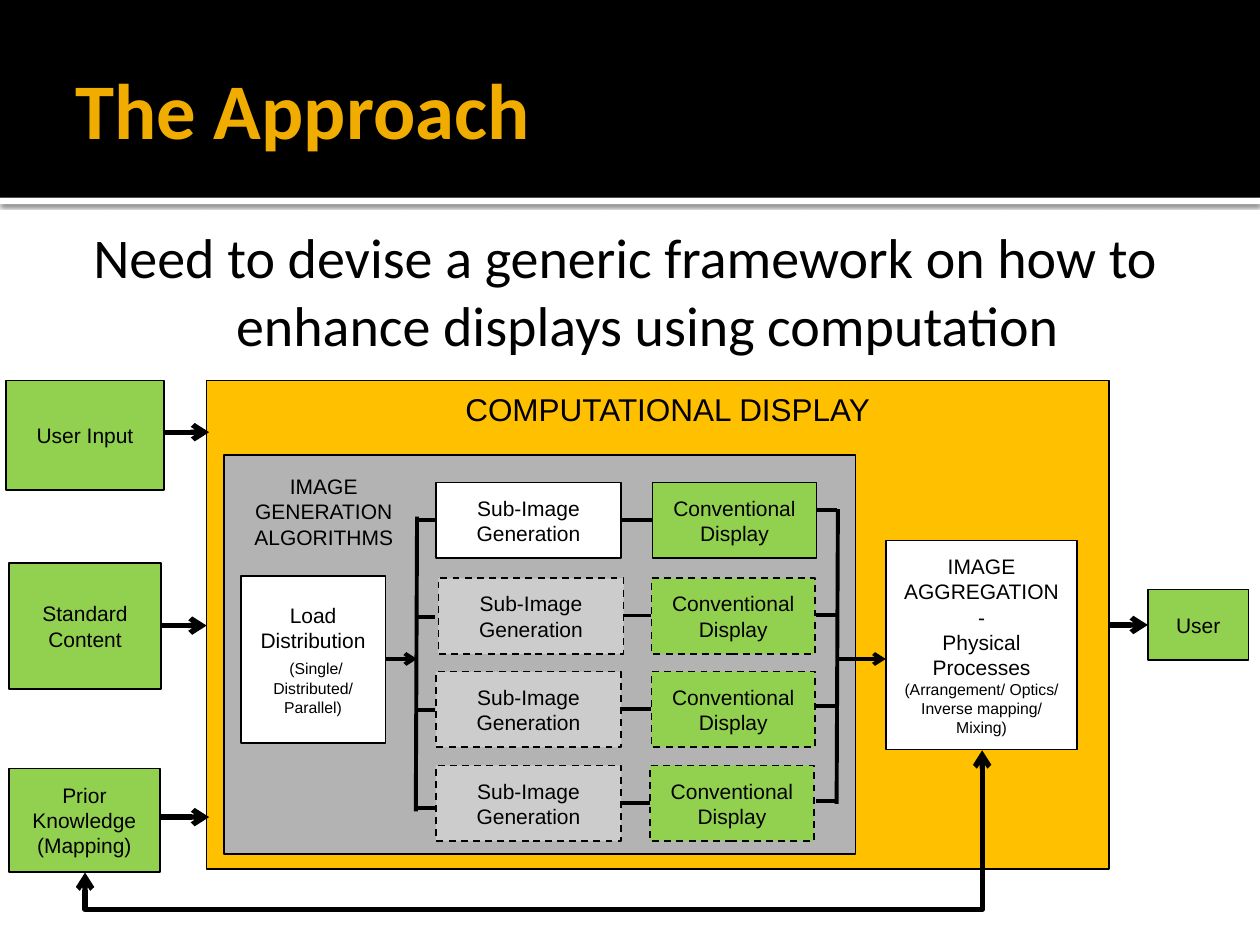
import pptx
import pptx.dml.color
import pptx.enum.dml
import pptx.enum.shapes
import pptx.enum.text
import pptx.oxml
import pptx.oxml.ns
import pptx.util

ANCHOR = pptx.enum.text.MSO_ANCHOR
ALIGN = pptx.enum.text.PP_ALIGN
DASH = pptx.enum.dml.MSO_LINE.DASH
CONNECTOR = pptx.enum.shapes.MSO_CONNECTOR
INCH = pptx.util.Inches(1)

# The slide is a grid of 100 columns by 75 rows
WIDTH, HEIGHT = 10 * INCH, int(7.5 * INCH)
COLUMN, ROW = WIDTH / 100, HEIGHT / 75

BLACK, WHITE, GREEN = "000000", "FFFFFF", "92D050"
GOLD, AMBER, GREY, PALE = "F0AD00", "FFC000", "B3B3B3", "CCCCCC"
LABEL = {"size": 12, "name": "Arial", "color": BLACK}
SMALL = {**LABEL, "size": 9}
HEADING = {**LABEL, "size": 18}
TITLE = {"size": 45, "name": "Calibri", "color": GOLD, "bold": True}
BODY = {"size": 32, "name": "Calibri", "color": BLACK}
THIN, BRANCH, FLOW = 1, 2.25, 3


def color(value):
    return pptx.dml.color.RGBColor.from_string(value)


def place(left, top, width, height):
    """Turn columns and rows into lengths."""
    return [round(n) for n in (left * COLUMN, top * ROW, width * COLUMN, height * ROW)]


def xml(text):
    space = pptx.oxml.ns.nsdecls("a")
    return pptx.oxml.parse_xml(text.replace(" ", f" {space} ", 1))


def style_span(span, style):
    for key, value in style.items():
        if key == "color":
            span.font.color.rgb = color(value)
        elif key == "size":
            span.font.size = pptx.util.Pt(value)
        else:
            setattr(span.font, key, value)


def write(box, paragraphs, align=ALIGN.CENTER, **frame_format):
    """Each paragraph is a list of (text, style) spans."""
    frame = box.text_frame
    for key, value in {"word_wrap": True, **frame_format}.items():
        setattr(frame, key, value)
    for index, spans in enumerate(paragraphs):
        para = frame.add_paragraph() if index else frame.paragraphs[0]
        para.alignment = align
        for text, style in spans:
            span = para.add_run()
            span.text = text
            style_span(span, style)


def add_text(page, area, text, style, **options):
    box = page.shapes.add_textbox(*place(*area))
    write(box, [[(text, style)]], **options)
    return box


def add_box(page, area, fill, paragraphs=(), outlined=True, dashed=False):
    kind = pptx.enum.shapes.MSO_SHAPE.RECTANGLE
    box = page.shapes.add_shape(kind, *place(*area))
    box.shadow.inherit = False
    box.fill.solid()
    box.fill.fore_color.rgb = color(fill)
    if outlined:
        box.line.color.rgb = color(BLACK)
        box.line.width = pptx.util.Pt(THIN)
    else:
        box.line.fill.background()
    if dashed:
        box.line.dash_style = DASH
    if paragraphs:
        write(box, paragraphs, vertical_anchor=ANCHOR.MIDDLE)
    return box


def labels(*texts):
    return [[(text, LABEL)] for text in texts]


def add_line(page, start, end, weight, arrows=(), kind=CONNECTOR.STRAIGHT):
    line = page.shapes.add_connector(kind, *place(*start, *end))
    line.line.color.rgb = color(BLACK)
    line.line.width = pptx.util.Pt(weight)
    stroke = line.line._get_or_add_ln()
    for arrow in arrows:
        stroke.append(xml(f'<a:{arrow} type="arrow"/>'))
    line._element.spPr.append(xml("<a:effectLst />"))
    return line


def add_header(page):
    strip = add_box(page, (0, 15.7, 100, 0.5), WHITE, outlined=False)
    effects = strip._element.spPr.find(pptx.oxml.ns.qn("a:effectLst"))
    effects.append(xml(
        '<a:outerShdw blurRad="31750" dist="10160" dir="5400000">'
        '<a:srgbClr val="000000"><a:alpha val="60000"/></a:srgbClr></a:outerShdw>'))
    add_box(page, (0, 0, 100, 15.7), BLACK, outlined=False)
    add_text(page, (5, 1.7, 90, 13.7), "The Approach", TITLE, align=ALIGN.LEFT,
             vertical_anchor=ANCHOR.MIDDLE, margin_right=INCH // 20)


def add_statement(page):
    box = add_text(page, (4.2, 16.7, 90, 13.3),
                   "Need to devise a generic framework on how to enhance displays "
                   "using computation", BODY,
                   margin_left=round(0.06 * INCH), margin_top=INCH // 10)
    properties = box.text_frame.paragraphs[0]._p.get_or_add_pPr()
    properties.set("marL", str(round(0.48 * INCH)))
    properties.set("indent", str(round(-0.35 * INCH)))


def add_stages(page):
    # Nested panels and their headings
    add_box(page, (16.4, 30.2, 71.6, 38.8), AMBER)
    add_box(page, (17.8, 36.1, 50.1, 31.7), GREY)
    add_text(page, (27.8, 30.5, 50.4, 4), "COMPUTATIONAL DISPLAY", HEADING)
    add_text(page, (18.2, 37.1, 15, 7.1), "IMAGE GENERATION ALGORITHMS", LABEL)

    # Inputs and user
    for area, texts in (
            ((0.5, 30.2, 12.5, 8.7), ["User Input"]),
            ((0.7, 44.7, 12.1, 10), ["Standard Content"]),
            ((0.7, 61, 12, 8.2), ["Prior Knowledge", "(Mapping)"]),
            ((91.1, 46.8, 8, 5.6), ["User"])):
        add_box(page, area, GREEN, labels(*texts))

    # Start and end of the processing
    add_box(page, (19.1, 45.7, 11.5, 13.3), WHITE, labels("Load Distribution") + [
        [(" ", LABEL), ("(Single/ Distributed/ Parallel)", SMALL)]])
    add_box(page, (70.3, 42.9, 15.2, 16.6), WHITE,
            labels("IMAGE", "AGGREGATION", "-", "Physical Processes")
            + [[("(Arrangement/ Optics/ Inverse mapping/ Mixing)", SMALL)]])


def add_branches(page):
    # Top, left of generation and display, then heights of the three links
    branches = (
        (38.3, 34.6, 51.8, 41.3, 41.3, 40.5),
        (45.9, 34.8, 51.7, 49, 48.85, 48.8),
        (53.3, 34.6, 51.7, 56.35, 56.3, 56),
        (60.75, 34.6, 51.6, 64.15, 63.7, 63.6))
    for index, (top, left, right, entry, link, leave) in enumerate(branches):
        optional = index > 0
        add_box(page, (left, top, 14.7, 6), PALE if optional else WHITE,
                labels("Sub-Image Generation"), dashed=optional)
        add_box(page, (right, top, 13, 6), GREEN,
                labels("Conventional Display"), dashed=optional)
        for start, end, height in ((33, 34.5, entry), (left + 14.7, right, link),
                                   (64.8, 66.4, leave)):
            add_line(page, (start, height), (end, height), BRANCH)

    # Shared rails
    add_line(page, (33.1, 41), (33, 64.4), BRANCH)
    add_line(page, (66.5, 40.4), (66.4, 63.8), BRANCH)


def add_flow(page):
    for left, right, height, weight in (
            (12.9, 16.6, 34.3, FLOW), (12.8, 16.4, 49.65, FLOW),
            (12.7, 16.6, 64.85, FLOW), (88.1, 91.1, 49.6, FLOW),
            (30.6, 33.1, 52.3, BRANCH), (66.4, 70.3, 52.3, BRANCH)):
        add_line(page, (left, height), (right, height), weight, ["tailEnd"])

    # Feedback between aggregation and prior knowledge, turned to run below
    loop = add_line(page, (37.5, 28.8), (47.2, 100), FLOW,
                    ["headEnd", "tailEnd"], CONNECTOR.ELBOW)
    properties = loop._element.spPr
    properties.find(pptx.oxml.ns.qn("a:xfrm")).set("rot", "5400000")
    guides = properties.find(pptx.oxml.ns.qn("a:prstGeom")).get_or_add_avLst()
    guides.append(xml('<a:gd name="adj1" fmla="val 130300"/>'))


def main():
    deck = pptx.Presentation()
    deck.slide_width, deck.slide_height = WIDTH, HEIGHT
    page = deck.slides.add_slide(deck.slide_layouts[6])
    for add_part in (add_header, add_stages, add_branches, add_flow, add_statement):
        add_part(page)
    deck.save("out.pptx")


if __name__ == "__main__":
    main()
